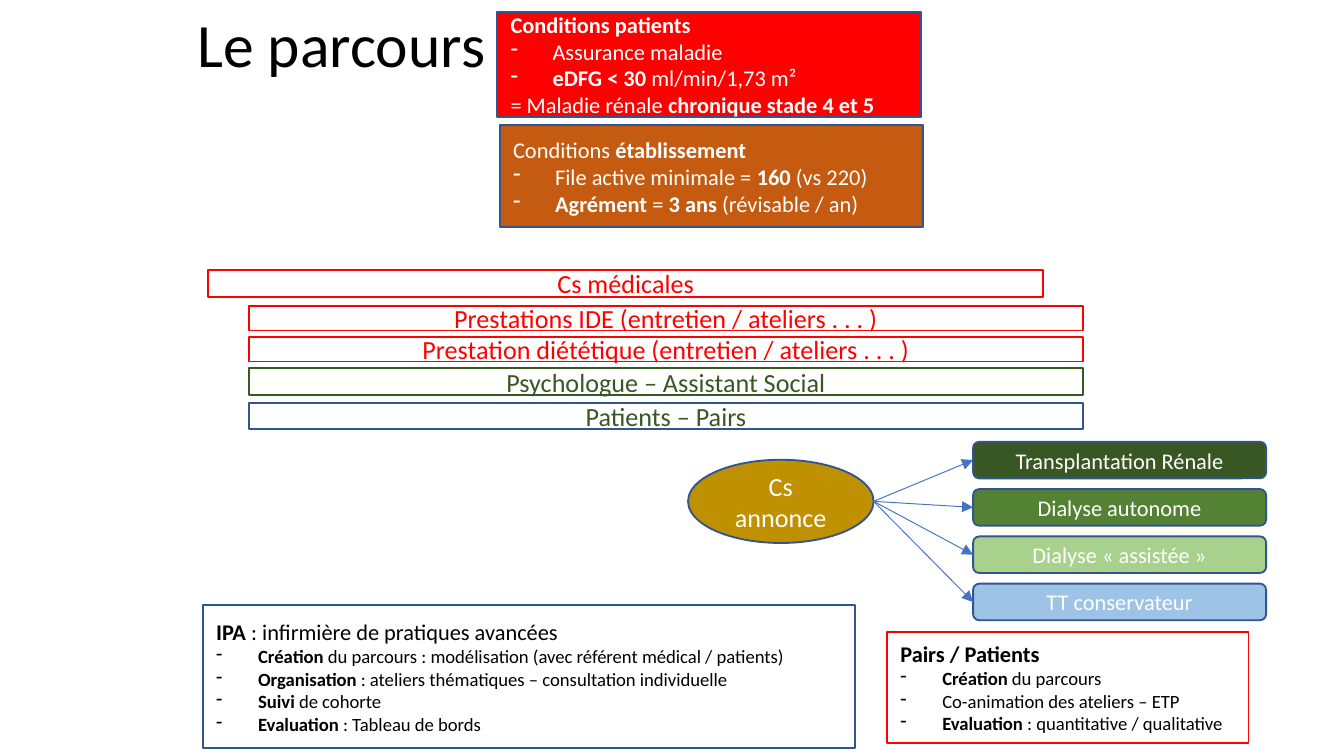
from pptx import Presentation
from pptx.dml.color import RGBColor
from pptx.enum.shapes import MSO_CONNECTOR, MSO_SHAPE
from pptx.enum.text import MSO_ANCHOR, PP_ALIGN
from pptx.oxml.ns import qn
from pptx.util import Pt
from lxml.etree import SubElement

COLORS = dict(
    black="000000", white="FFFFFF", red="FF0000", orange="C55A11",
    navy="325491", blue="4472C4", sky="9DC3E6", gold="BF9000",
    forest="385723", green="548235", lime="A9D18E",
)


def rgb(name):
    return RGBColor.from_string(COLORS[name])


def write(p, text, size, color):
    """Fill a paragraph; ** switches bold on and off."""
    for i, part in enumerate(text.split("**")):
        if part:
            r = p.add_run()
            r.text = part
            fmt = dict(name="Calibri", size=Pt(size), bold=i % 2 == 1)
            for key, value in fmt.items():
                setattr(r.font, key, value)
            r.font.color.rgb = rgb(color)


def add_box(s, kind, box, fill=None, line="navy"):
    sp = s.shapes.add_shape(kind, *map(Pt, box))
    sp.shadow.inherit = False
    if fill:
        sp.fill.solid()
        sp.fill.fore_color.rgb = rgb(fill)
    else:
        sp.fill.background()
    sp.line.color.rgb = rgb(line)
    sp.line.width = Pt(1)
    sp.text_frame.word_wrap = True
    sp.text_frame.vertical_anchor = MSO_ANCHOR.MIDDLE
    return sp


def add_label(s, kind, box, text, size, color="white", **look):
    p = add_box(s, kind, box, **look).text_frame.paragraphs[0]
    p.alignment = PP_ALIGN.CENTER
    write(p, text, size, color)


def add_panel(s, box, lines, color, item_size=12, **look):
    """Heading, then lines; those starting with "- " become list items."""
    tf = add_box(s, MSO_SHAPE.RECTANGLE, box, **look).text_frame
    for i, text in enumerate(lines):
        p = tf.add_paragraph() if i else tf.paragraphs[0]
        p.alignment = PP_ALIGN.LEFT
        if text.startswith("- "):
            pPr = p._p.get_or_add_pPr()
            pPr.set("marL", str(Pt(22.5)))
            pPr.set("indent", str(-Pt(22.5)))
            SubElement(pPr, qn("a:buChar"), char="-")
        write(p, text.removeprefix("- "), item_size if i else 12, color)


def add_arrow(s, start, end):
    c = s.shapes.add_connector(MSO_CONNECTOR.STRAIGHT, *map(Pt, start + end))
    c.line.color.rgb = rgb("blue")
    c.line.width = Pt(0.5)
    SubElement(c.line._get_or_add_ln(), qn("a:tailEnd"), type="triangle")
    SubElement(c._element.spPr, qn("a:effectLst"))


def add_title(s, box, text):
    sp = s.shapes.title
    for key, value in zip(("left", "top", "width", "height"), box):
        setattr(sp, key, Pt(value))
    tf = sp.text_frame
    for side in ("left", "top", "right", "bottom"):
        setattr(tf, f"margin_{side}", 0)
    tf.vertical_anchor = MSO_ANCHOR.BOTTOM
    p = tf.paragraphs[0]
    p.alignment = PP_ALIGN.LEFT
    p.line_spacing = 0.8
    write(p, text, 33, "black")


def add_conditions(s, box):
    x, y, w, h = box
    add_panel(s, (x, y, w, h), [
        "**Conditions patients**",
        "- Assurance maladie",
        "- **eDFG < 30 **ml/min/1,73 m²",
        "= Maladie rénale **chronique stade 4 et 5**",
    ], "white", fill="red")
    add_panel(s, (x + 1.4, y + 60.5, w, h - 1.4), [
        "Conditions **établissement**",
        "- File active minimale = **160** (vs 220)",
        "- **Agrément** = **3 ans **(révisable / an)",
    ], "white", fill="orange")


def add_services(s, box):
    x, y, w = box
    indent = 21.6
    bars = [  # indent, offset, height, text, text colour, outline
        (0, 0, 14.4, "Cs médicales", "red", "red"),
        (indent, 19.4, 13, "Prestations IDE (entretien / ateliers . . . )", "red", "red"),
        (indent, 36, 13, "Prestation diététique (entretien / ateliers . . . )", "red", "red"),
        (indent, 52.6, 14.4, "Psychologue – Assistant Social", "forest", "forest"),
        (indent, 71.3, 13.7, "Patients – Pairs", "forest", "navy"),
    ]
    for dx, dy, h, text, color, line in bars:
        add_label(s, MSO_SHAPE.RECTANGLE, (x + dx, y + dy, w, h),
                  text, 14, color, line=line)


def add_orientation(s, box):
    x, y, w, h = box
    oval_w, oval_h, choice_w, choice_h = 99.4, 44.6, 157, 19.6
    oval_y = y + 9.6
    choice_x = x + w - choice_w
    add_label(s, MSO_SHAPE.OVAL, (x, oval_y, oval_w, oval_h),
              "Cs annonce", 14, fill="gold")
    choices = [
        ("Transplantation Rénale", "forest"),
        ("Dialyse autonome", "green"),
        ("Dialyse « assistée »", "lime"),
        ("TT conservateur", "sky"),
    ]
    step = (h - choice_h) / (len(choices) - 1)
    for i, (text, fill) in enumerate(choices):
        top = y + i * step
        add_label(s, MSO_SHAPE.ROUNDED_RECTANGLE,
                  (choice_x, top, choice_w, choice_h), text, 12, fill=fill)
        add_arrow(s, (x + oval_w, oval_y + oval_h / 2),
                  (choice_x, top + choice_h / 2))


def add_roles(s, nurse_box, peers_box):
    add_panel(s, nurse_box, [
        "**IPA **: infirmière de pratiques avancées",
        "- **Création** du parcours : modélisation (avec référent médical / patients)",
        "- **Organisation** : ateliers thématiques – consultation individuelle",
        "- **Suivi** de cohorte",
        "- **Evaluation** : Tableau de bords",
    ], "black", item_size=10)
    add_panel(s, peers_box, [
        "**Pairs / Patients**",
        "- **Création** du parcours",
        "- Co-animation des ateliers – ETP",
        "- **Evaluation** : quantitative / qualitative",
    ], "black", item_size=10, line="red")


def main():
    prs = Presentation()
    prs.slide_width, prs.slide_height = Pt(720), Pt(405)
    s = prs.slides.add_slide(prs.slide_layouts[5])
    add_title(s, (105.8, 3.6, 572.4, 38.9), "Le parcours")
    add_conditions(s, (266.4, 6.5, 226.8, 56.2))
    add_services(s, (111.6, 144.7, 447.1))
    add_orientation(s, (368.6, 236.7, 309.7, 95.6))
    add_roles(s, (108.7, 324, 349.2, 77), (475.2, 338.4, 193.7, 59.8))
    prs.save("out.pptx")


if __name__ == "__main__":
    main()
